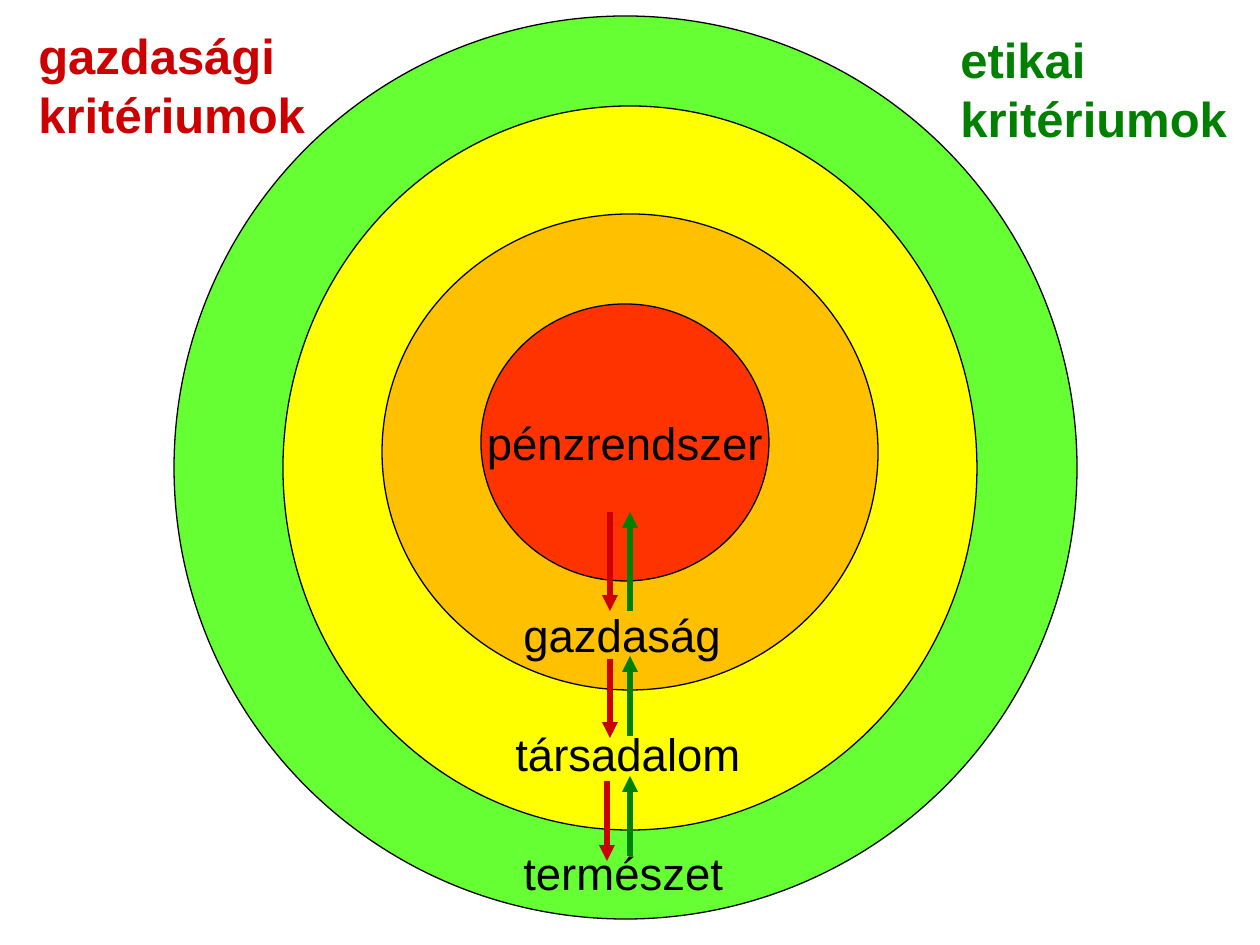
from lxml import etree
from pptx import Presentation
from pptx.dml.color import RGBColor
from pptx.enum.shapes import MSO_CONNECTOR, MSO_SHAPE
from pptx.enum.text import MSO_ANCHOR, MSO_AUTO_SIZE, PP_ALIGN
from pptx.oxml.ns import qn
from pptx.util import Pt

OVAL = MSO_SHAPE.OVAL
STRAIGHT = MSO_CONNECTOR.STRAIGHT
MIDDLE = MSO_ANCHOR.MIDDLE
GROW = MSO_AUTO_SIZE.SHAPE_TO_FIT_TEXT
CENTER = PP_ALIGN.CENTER

BLACK = RGBColor(0x00, 0x00, 0x00)
LIME = RGBColor(0x66, 0xFF, 0x33)
YELLOW = RGBColor(0xFF, 0xFF, 0x00)
ORANGE = RGBColor(0xFF, 0xC0, 0x00)
RED = RGBColor(0xFF, 0x33, 0x00)
ECONOMIC = RGBColor(0xCC, 0x00, 0x00)
ETHICAL = RGBColor(0x00, 0x80, 0x00)

PX_PER_INCH = 126
EMU_PER_INCH = 914400
WIDTH, HEIGHT = 1260, 945


def emu(px):
    """Turn pixels into EMU."""
    return round(px * EMU_PER_INCH / PX_PER_INCH)


class Diagram:
    """Holds the text style and the current slide, and draws its elements."""

    font = "Arial"
    label_size = 26
    heading_size = 28

    def __init__(self, page):
        """Keep the slide that is drawn on."""
        self.page = page

    def fill_text(self, frame, lines, size, color, bold=False, align=None):
        """Fill a text frame with one paragraph per line."""
        for index, line in enumerate(lines):
            para = frame.paragraphs[0] if index == 0 else frame.add_paragraph()
            para.alignment = align
            span = para.add_run()
            span.text = line
            span.font.name = self.font
            span.font.size = Pt(size)
            span.font.bold = bold
            span.font.color.rgb = color

    def ring(self, left, top, width, height, fill, label=None):
        """Draw an outlined ellipse, with a centred label if one is given."""
        oval = self.page.shapes.add_shape(OVAL, *map(emu, (left, top, width, height)))
        oval.shadow.inherit = False
        oval.fill.solid()
        oval.fill.fore_color.rgb = fill
        oval.line.color.rgb = BLACK
        oval.line.width = Pt(0.75)
        if label:
            oval.text_frame.word_wrap = False
            oval.text_frame.vertical_anchor = MIDDLE
            self.fill_text(oval.text_frame, [label], self.label_size, BLACK, align=CENTER)

    def text(self, left, top, width, height, lines, size, color, bold=False):
        """Place a text box that fits its text."""
        box = self.page.shapes.add_textbox(*map(emu, (left, top, width, height)))
        box.text_frame.word_wrap = False
        box.text_frame.auto_size = GROW
        self.fill_text(box.text_frame, lines, size, color, bold)

    def label(self, left, top, width, name):
        """Name a ring."""
        self.text(left, top, width, 68, [name], self.label_size, BLACK)

    def heading(self, left, top, lines, color):
        """Place a bold corner heading."""
        self.text(left, top, 294, 131, lines, self.heading_size, color, True)

    def arrow(self, x, start, end, color):
        """Draw a vertical arrow from start to end."""
        line = self.page.shapes.add_connector(STRAIGHT, *map(emu, (x, start, x, end)))
        line.line.color.rgb = color
        line.line.width = Pt(3)
        properties = line._element.spPr
        outline = properties.find(qn("a:ln"))
        etree.SubElement(outline, qn("a:tailEnd"), type="triangle")
        etree.SubElement(properties, qn("a:effectLst"))


def main():
    """Build the slide and save it."""
    deck = Presentation()
    deck.slide_width, deck.slide_height = emu(WIDTH), emu(HEIGHT)
    diagram = Diagram(deck.slides.add_slide(deck.slide_layouts[6]))

    diagram.ring(174, 16, 903, 903, LIME)
    diagram.ring(283, 106, 694, 724, YELLOW)
    diagram.ring(382, 214, 496, 476, ORANGE)
    diagram.ring(481, 304, 288, 277, RED, "pénzrendszer")

    diagram.label(511, 601, 226, "gazdaság")
    diagram.label(503, 720, 253, "társadalom")
    diagram.label(511, 839, 227, "természet")

    diagram.heading(26, 19, ["gazdasági", "kritériumok"], ECONOMIC)
    diagram.heading(948, 23, ["etikai", "kritériumok"], ETHICAL)

    for x, start, end in ((610, 512, 611), (610, 659, 738), (607, 781, 861)):
        diagram.arrow(x, start, end, ECONOMIC)
    for start, end in ((611, 512), (736, 656), (856, 776)):
        diagram.arrow(630, start, end, ETHICAL)

    deck.save("out.pptx")


if __name__ == "__main__":
    main()
